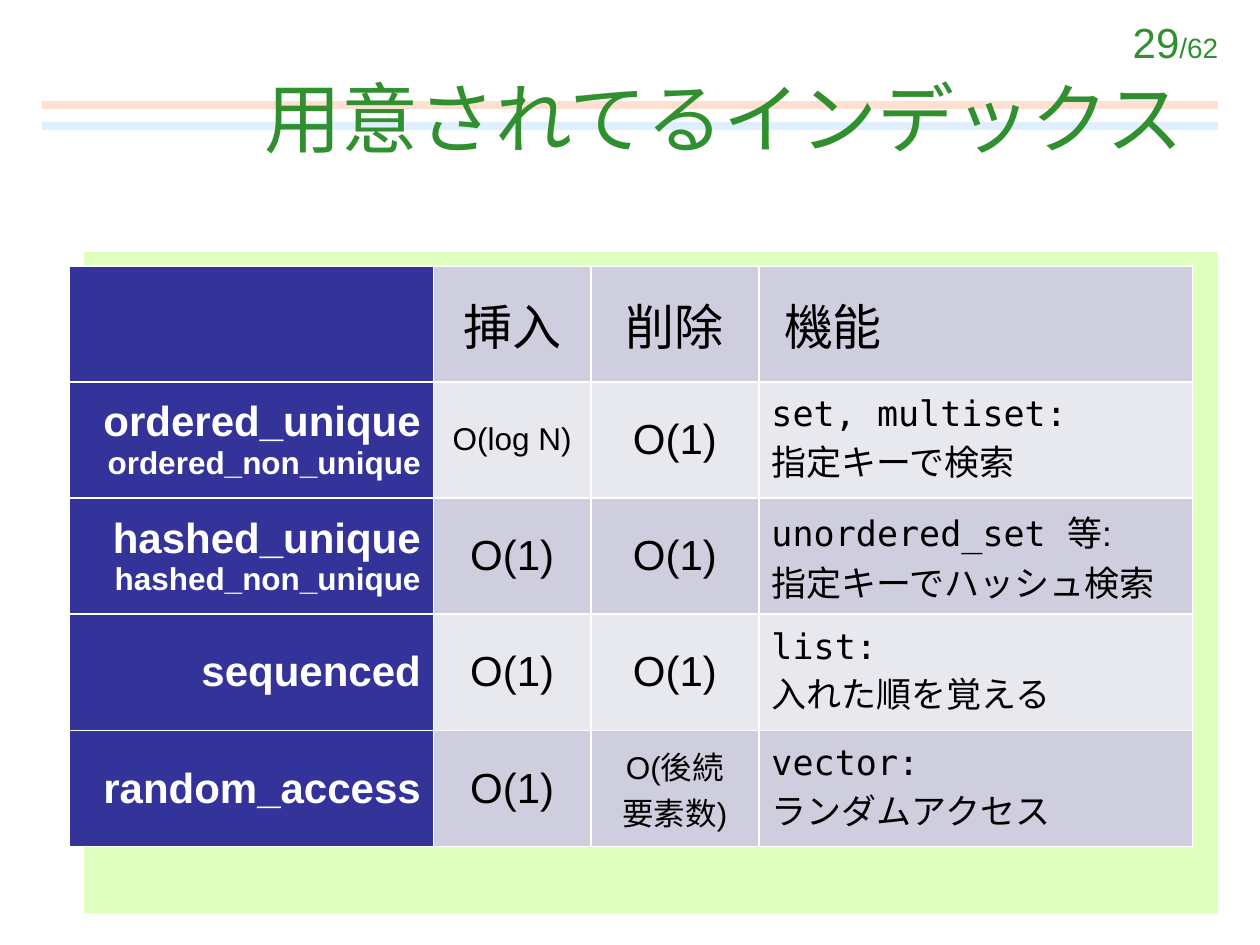
from dataclasses import dataclass

from lxml.etree import SubElement
from pptx import Presentation
from pptx.dml.color import RGBColor
from pptx.enum.shapes import MSO_CONNECTOR, MSO_SHAPE
from pptx.enum.text import MSO_ANCHOR, PP_ALIGN
from pptx.oxml import parse_xml
from pptx.oxml.ns import nsdecls, qn
from pptx.util import Inches, Pt


@dataclass(frozen=True)
class Theme:
    green: str = "309030"
    panel: str = "DFFFBF"
    blue_rule: str = "DFEFFF"
    pink_rule: str = "FFDFCF"
    index_fill: str = "333399"
    bands: tuple = ("CECEDE", "E8E8EF")
    black: str = "000000"
    white: str = "FFFFFF"
    sans: str = "Arial"
    mono: str = "DejaVu Sans Mono"
    japanese: str = "Noto Sans CJK JP"
    title: int = 44
    heading: int = 28
    large: int = 24
    body: int = 20
    small: int = 18
    page_total: int = 16


theme = Theme()


def style(run, size, color, font=theme.sans, bold=False):
    run.font.size = Pt(size)
    run.font.name = font
    run.font.bold = bold
    run.font.color.rgb = RGBColor.from_string(color)
    SubElement(run._r.get_or_add_rPr(), qn("a:ea")).set("typeface", theme.japanese)


def write(paragraph, pieces, color, align, bold=False):
    """Add (text, size, font) pieces as runs; None starts a new line."""
    paragraph.alignment = align
    for piece in pieces:
        if piece is None:
            paragraph.add_line_break()
            continue
        text, size, font = piece
        run = paragraph.add_run()
        run.text = text
        style(run, size, color, font, bold)


prs = Presentation()
prs.slide_width, prs.slide_height = Inches(10), Inches(7.5)
unit = prs.slide_width / 30  # the slide is a grid of 30 columns by 22.5 rows
slide = prs.slides.add_slide(prs.slide_layouts[5])


# Panel and rules behind the content
panel = slide.shapes.add_shape(
    MSO_SHAPE.RECTANGLE, *(int(n * unit) for n in (2, 6, 27, 15.75)))
panel.shadow.inherit = False
panel.fill.solid()
panel.fill.fore_color.rgb = RGBColor.from_string(theme.panel)
panel.line.fill.background()

for row, color in ((3, theme.blue_rule), (2.5, theme.pink_rule)):
    rule = slide.shapes.add_connector(
        MSO_CONNECTOR.STRAIGHT, *(int(n * unit) for n in (1, row, 29, row)))
    rule.line.width = Pt(5)
    rule.line.color.rgb = RGBColor.from_string(color)
    SubElement(rule._element.spPr, qn("a:effectLst"))

# Page number and title
page = slide.shapes.add_textbox(*(int(n * unit) for n in (23.2, 0.25, 6.1, 1.5)))
page.text_frame.word_wrap = True
write(page.text_frame.paragraphs[0],
      [("29", theme.large, theme.sans), ("/62", theme.page_total, theme.sans)],
      theme.green, PP_ALIGN.RIGHT)

title = slide.shapes.title
title.left, title.top, title.width, title.height = (
    int(n * unit) for n in (1.5, 0.9, 27, 3.75))
title.text_frame.text = "用意されてるインデックス"
title.text_frame.vertical_anchor = MSO_ANCHOR.MIDDLE
title.text_frame.paragraphs[0].alignment = PP_ALIGN.RIGHT
style(title.text_frame.paragraphs[0].runs[0], theme.title, theme.green, theme.japanese)
slide.shapes._spTree.append(title._element)  # in front of the rules

# Index table: each cell is a list of pieces
constant = [("O(1)", theme.large, theme.sans)]
headings = [[]] + [[(word, theme.heading, theme.sans)] for word in ("挿入", "削除", "機能")]
indexes = [
    ("ordered_unique", "ordered_non_unique",
     [("O(log N)", theme.small, theme.sans)], constant,
     "set, multiset:", "", "指定キーで検索"),
    ("hashed_unique", "hashed_non_unique", constant, constant,
     "unordered_set ", "等:", "指定キーでハッシュ検索"),
    ("sequenced", "", constant, constant, "list:", "", "入れた順を覚える"),
    ("random_access", "", constant,
     [("O(後続", theme.small, theme.sans), None, ("要素数)", theme.small, theme.sans)],
     "vector:", "", "ランダムアクセス"),
]
rows = [headings]
for unique, non_unique, insertion, deletion, container, suffix, feature in indexes:
    names = [(unique, theme.large, theme.sans)]
    if non_unique:
        names += [None, (non_unique, theme.small, theme.sans)]
    features = [(container, theme.body, theme.mono)]
    if suffix:
        features.append((suffix, theme.body, theme.sans))
    features += [None, (feature, theme.body, theme.sans)]
    rows.append([names, insertion, deletion, features])

column_units = (8.67, 3.75, 4, 10.32)
row_units = 2.765
aligns = (PP_ALIGN.RIGHT, PP_ALIGN.CENTER, PP_ALIGN.CENTER, PP_ALIGN.LEFT)
table = slide.shapes.add_table(
    len(rows), len(column_units),
    *(int(n * unit) for n in (1.65, 6.33, sum(column_units), row_units * len(rows)))).table
table.first_row = table.horz_banding = False
for column, width in zip(table.columns, column_units):
    column.width = int(width * unit)

for r, row in enumerate(rows):
    table.rows[r].height = int(row_units * unit)
    for c, pieces in enumerate(row):
        cell = table.cell(r, c)
        cell.vertical_anchor = MSO_ANCHOR.MIDDLE
        is_index = c == 0
        for side in "LRTB":
            cell._tc.get_or_add_tcPr().append(parse_xml(
                f'<a:ln{side} {nsdecls("a")} w="{Pt(1)}"><a:solidFill>'
                f'<a:srgbClr val="{theme.white}"/></a:solidFill></a:ln{side}>'))
        cell.fill.solid()
        cell.fill.fore_color.rgb = RGBColor.from_string(
            theme.index_fill if is_index else theme.bands[r % 2])
        write(cell.text_frame.paragraphs[0], pieces,
              theme.white if is_index else theme.black, aligns[c], is_index)

table.cell(0, 3).margin_left = Inches(0.2)

prs.save("out.pptx")
